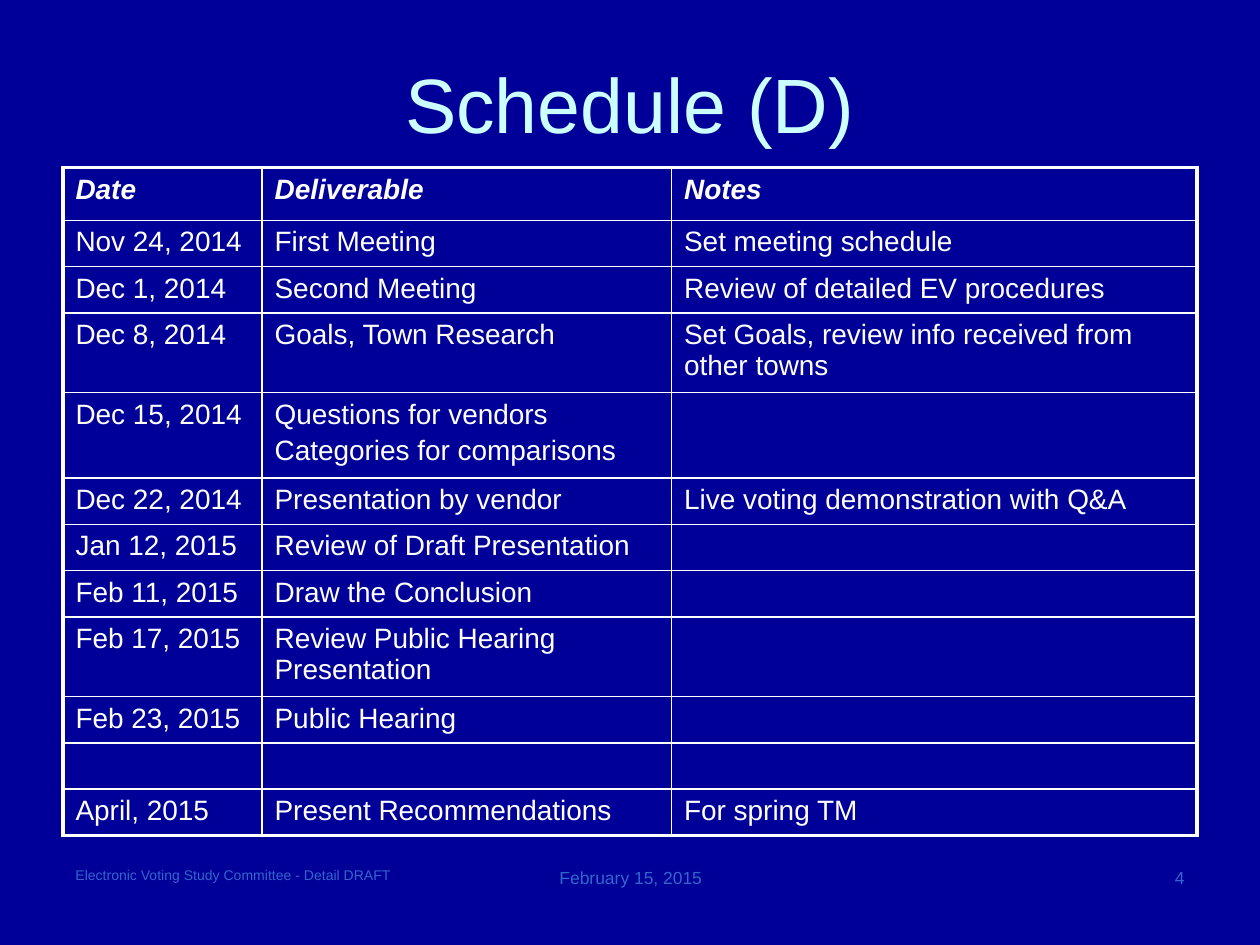
from lxml import etree
from pptx import Presentation
from pptx import util as u
from pptx.dml.color import RGBColor
from pptx.enum import text
from pptx.oxml.ns import qn

NAVY = RGBColor(0x00, 0x00, 0x99)
WHITE = RGBColor(0xFF, 0xFF, 0xFF)
PALE = RGBColor(0xCC, 0xFF, 0xFF)
BLUE = RGBColor(0x33, 0x66, 0xCC)

LEFT, CENTER, RIGHT = text.PP_ALIGN.LEFT, text.PP_ALIGN.CENTER, text.PP_ALIGN.RIGHT
TOP, MIDDLE = text.MSO_ANCHOR.TOP, text.MSO_ANCHOR.MIDDLE

LABELS = [
    ("Electronic Voting Study Committee - Detail DRAFT", (0.5, 6.83, 3.25, 0.52), 8, BLUE, LEFT, TOP),
    ("February 15, 2015", (3.92, 6.83, 2.17, 0.52), 10, BLUE, CENTER, TOP),
    ("4", (6.25, 6.83, 3.25, 0.52), 10, BLUE, RIGHT, TOP),
    ("Schedule (D)", (0.5, 0.3, 9, 1.03), 44, PALE, CENTER, MIDDLE),
]

COLUMNS = (1.58, 3.25, 4.17)
HEADER, ONE_LINE, WRAPPED, TWO_ITEMS = 0.42, 0.35, 0.59, 0.64
SCHEDULE = [
    (HEADER, "Date", "Deliverable", "Notes"),
    (ONE_LINE, "Nov 24, 2014", "First Meeting", "Set meeting schedule"),
    (ONE_LINE, "Dec 1, 2014", "Second Meeting", "Review of detailed EV procedures"),
    (WRAPPED, "Dec 8, 2014", "Goals, Town Research", "Set Goals, review info received from other towns"),
    (TWO_ITEMS, "Dec 15, 2014", "Questions for vendors\nCategories for comparisons", ""),
    (ONE_LINE, "Dec 22, 2014", "Presentation by vendor", "Live voting demonstration with Q&A"),
    (ONE_LINE, "Jan 12, 2015", "Review of Draft Presentation", ""),
    (ONE_LINE, "Feb 11, 2015", "Draw the Conclusion", ""),
    (WRAPPED, "Feb 17, 2015", "Review Public Hearing Presentation", ""),
    (ONE_LINE, "Feb 23, 2015", "Public Hearing", ""),
    (ONE_LINE, "", "", ""),
    (ONE_LINE, "April, 2015", "Present Recommendations", "For spring TM"),
]
TEXT_SIZE = 16
THIN, THICK = 1, 2.25


def write(para, wording, color, **formats):
    span = para.add_run()
    span.text = wording
    span.font.color.rgb = color
    for name, value in {"name": "Arial", **formats}.items():
        setattr(span.font, name, value)


def add_label(page, wording, place, size, color, align, anchor):
    box = page.shapes.add_textbox(*map(u.Inches, place))
    box.text_frame.word_wrap = True
    box.text_frame.vertical_anchor = anchor
    para = box.text_frame.paragraphs[0]
    para.alignment = align
    write(para, wording, color, size=u.Pt(size))


def draw_borders(cell, outer_sides):
    properties = cell._tc.get_or_add_tcPr()
    for side, is_outer in outer_sides.items():
        width = u.Pt(THICK if is_outer else THIN)
        line = etree.SubElement(properties, qn(f"a:ln{side}"), w=str(width))
        fill = etree.SubElement(line, qn("a:solidFill"))
        etree.SubElement(fill, qn("a:srgbClr"), val=str(WHITE))


def fill_cell(cell, wording, is_header):
    frame = cell.text_frame
    if not wording:
        etree.SubElement(frame.paragraphs[0]._p, qn("a:endParaRPr"), sz=str(TEXT_SIZE * 100))
    else:
        for number, item in enumerate(wording.split("\n")):
            para = frame.add_paragraph() if number else frame.paragraphs[0]
            if number:
                para.space_before = u.Pt(TEXT_SIZE * 0.2)
            write(para, item, WHITE, size=u.Pt(TEXT_SIZE), bold=is_header, italic=is_header)


def add_schedule(page):
    heights = [row[0] for row in SCHEDULE]
    place = (0.5, 1.33, sum(COLUMNS), sum(heights))
    table = page.shapes.add_table(len(SCHEDULE), len(COLUMNS), *map(u.Inches, place)).table
    table.first_row = table.horz_banding = False
    for column, width in zip(table.columns, COLUMNS):
        column.width = u.Inches(width)
    last_row, last_column = len(SCHEDULE) - 1, len(COLUMNS) - 1
    for r, (height, *wordings) in enumerate(SCHEDULE):
        table.rows[r].height = u.Inches(height)
        for c, wording in enumerate(wordings):
            cell = table.cell(r, c)
            draw_borders(cell, {"L": c == 0, "R": c == last_column, "T": r == 0, "B": r == last_row})
            cell.fill.background()
            fill_cell(cell, wording, r == 0)


def main():
    deck = Presentation()
    deck.slide_width, deck.slide_height = u.Inches(10), u.Inches(7.5)
    page = deck.slides.add_slide(deck.slide_layouts[6])
    page.background.fill.solid()
    page.background.fill.fore_color.rgb = NAVY
    for label in LABELS:
        add_label(page, *label)
    add_schedule(page)
    deck.save("out.pptx")


if __name__ == "__main__":
    main()
